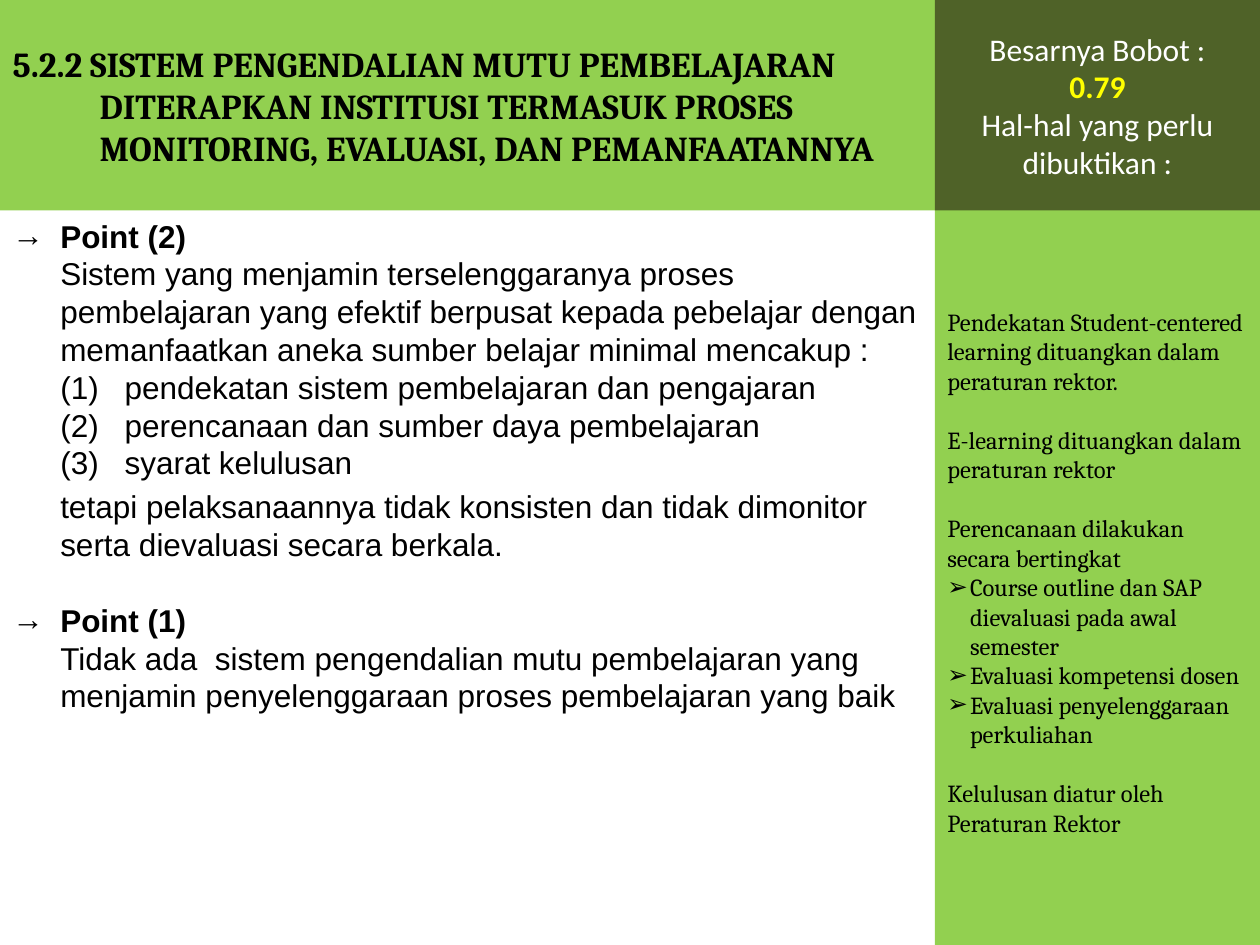
"""Build the slide on quality control of learning, section 5.2.2."""
from dataclasses import dataclass

import pptx
import pptx.dml.color
import pptx.enum.shapes
import pptx.enum.text
import pptx.oxml
import pptx.oxml.ns
import pptx.util
from pptx.util import Inches

RGBColor = pptx.dml.color.RGBColor
GREEN = RGBColor(0x92, 0xD0, 0x50)
OLIVE = RGBColor(0x4F, 0x62, 0x28)
YELLOW = RGBColor(0xFF, 0xFF, 0x00)
BLACK = RGBColor(0, 0, 0)
WHITE = RGBColor(0xFF, 0xFF, 0xFF)
LEFT = pptx.enum.text.PP_ALIGN.LEFT
CENTER = pptx.enum.text.PP_ALIGN.CENTER
MIDDLE = pptx.enum.text.MSO_ANCHOR.MIDDLE

SPLIT = 7.42
HEADER_HEIGHT = 1.67
SIDE_WIDTH = 10 - SPLIT
BODY_GAP = 21.6
SIDE_GAP = 16.9


@dataclass
class Style:
    font: str
    size: int
    color: RGBColor
    align: int = LEFT
    bold: bool = False


@dataclass
class Line:
    text: str
    margin: float = 0
    hanging: float = 0
    bullet: str = ""
    before: float = 0
    bold: bool = False
    color: RGBColor | None = None


def point(text: str, before: float = 0) -> Line:
    return Line(text, 0.38, 0.38, "→", before, bold=True)


def detail(text: str, before: float = 0) -> Line:
    return Line(text, 0.38, before=before)


def numbered(number: int, text: str) -> Line:
    return Line(f"({number})\t{text}", 0.89, 0.51)


def evidence(text: str) -> Line:
    return Line(text, 0.18, 0.18, "➢")


HEADING = [Line(
    "5.2.2 SISTEM PENGENDALIAN MUTU PEMBELAJARAN DITERAPKAN INSTITUSI "
    "TERMASUK PROSES MONITORING, EVALUASI, DAN PEMANFAATANNYA", 0.69, 0.69)]

REQUIREMENTS = [
    "pendekatan sistem pembelajaran dan pengajaran",
    "perencanaan dan sumber daya pembelajaran",
    "syarat kelulusan",
]

POINTS = [
    point("Point (2)"),
    detail("Sistem yang menjamin terselenggaranya proses pembelajaran yang efektif "
           "berpusat kepada pebelajar dengan memanfaatkan aneka sumber belajar "
           "minimal mencakup :"),
    *(numbered(number, text) for number, text in enumerate(REQUIREMENTS, 1)),
    detail("tetapi pelaksanaannya tidak konsisten dan tidak dimonitor serta "
           "dievaluasi secara berkala.", 3.6),
    point("Point (1)", BODY_GAP),
    detail("Tidak ada  sistem pengendalian mutu pembelajaran yang menjamin "
           "penyelenggaraan proses pembelajaran yang baik"),
]

EVIDENCE = [
    Line("Pendekatan Student-centered learning dituangkan dalam peraturan rektor."),
    Line("E-learning dituangkan dalam peraturan rektor", before=SIDE_GAP),
    Line("Perencanaan dilakukan secara bertingkat", before=SIDE_GAP),
    evidence("Course outline dan SAP dievaluasi pada awal semester"),
    evidence("Evaluasi kompetensi dosen"),
    evidence("Evaluasi penyelenggaraan perkuliahan"),
    Line("Kelulusan diatur oleh Peraturan Rektor", before=SIDE_GAP),
]

WEIGHT = [
    Line("Besarnya Bobot :"),
    Line("0.79", bold=True, color=YELLOW),
    Line("Hal-hal yang perlu dibuktikan :"),
]


def write(frame: pptx.text.text.TextFrame, lines: list[Line], style: Style) -> None:
    frame.word_wrap = True
    frame.auto_size = pptx.enum.text.MSO_AUTO_SIZE.NONE
    frame.text = "\n".join(line.text for line in lines)
    for paragraph, line in zip(frame.paragraphs, lines):
        paragraph.alignment = style.align
        paragraph.space_before = pptx.util.Pt(line.before)
        properties = paragraph._p.get_or_add_pPr()
        properties.set("marL", str(Inches(line.margin)))
        properties.set("indent", str(-Inches(line.hanging)))
        if line.bullet:
            typeface = pptx.oxml.parse_xml(
                f'<a:buFont {pptx.oxml.ns.nsdecls("a")} typeface="Arial"/>')
            bullet = pptx.oxml.parse_xml(
                f'<a:buChar {pptx.oxml.ns.nsdecls("a")} char="{line.bullet}"/>')
            properties.extend([typeface, bullet])
        for run in paragraph.runs:
            run.font.name = style.font
            run.font.size = pptx.util.Pt(style.size)
            run.font.bold = style.bold or line.bold
            run.font.color.rgb = line.color or style.color


def add_panel(slide: pptx.slide.Slide, top: float, height: float, fill: RGBColor,
              lines: list[Line], style: Style) -> None:
    panel = slide.shapes.add_shape(
        pptx.enum.shapes.MSO_SHAPE.RECTANGLE,
        Inches(SPLIT), Inches(top), Inches(SIDE_WIDTH), Inches(height))
    panel.shadow.inherit = False
    panel.fill.solid()
    panel.fill.fore_color.rgb = fill
    panel.line.fill.background()
    panel.text_frame.vertical_anchor = MIDDLE
    write(panel.text_frame, lines, style)


def main() -> None:
    deck = pptx.Presentation()
    deck.slide_width, deck.slide_height = Inches(10), Inches(7.5)
    slide = deck.slides.add_slide(deck.slide_layouts.get_by_name("Title Only"))

    heading = slide.shapes.title
    heading.left, heading.top = Inches(0), Inches(0)
    heading.width, heading.height = Inches(7.83), Inches(HEADER_HEIGHT)
    heading.fill.solid()
    heading.fill.fore_color.rgb = GREEN
    heading.text_frame.vertical_anchor = MIDDLE
    write(heading.text_frame, HEADING, Style("Cambria", 20, BLACK, bold=True))

    points = slide.shapes.add_textbox(
        Inches(0), Inches(HEADER_HEIGHT), Inches(SPLIT), Inches(7.5 - HEADER_HEIGHT))
    write(points.text_frame, POINTS, Style("Arial", 18, BLACK))

    add_panel(slide, 1.58, 5.92, GREEN, EVIDENCE, Style("Cambria", 14, BLACK))
    add_panel(slide, 0, HEADER_HEIGHT, OLIVE, WEIGHT,
              Style("Calibri", 18, WHITE, CENTER))
    deck.save("out.pptx")


if __name__ == "__main__":
    main()
